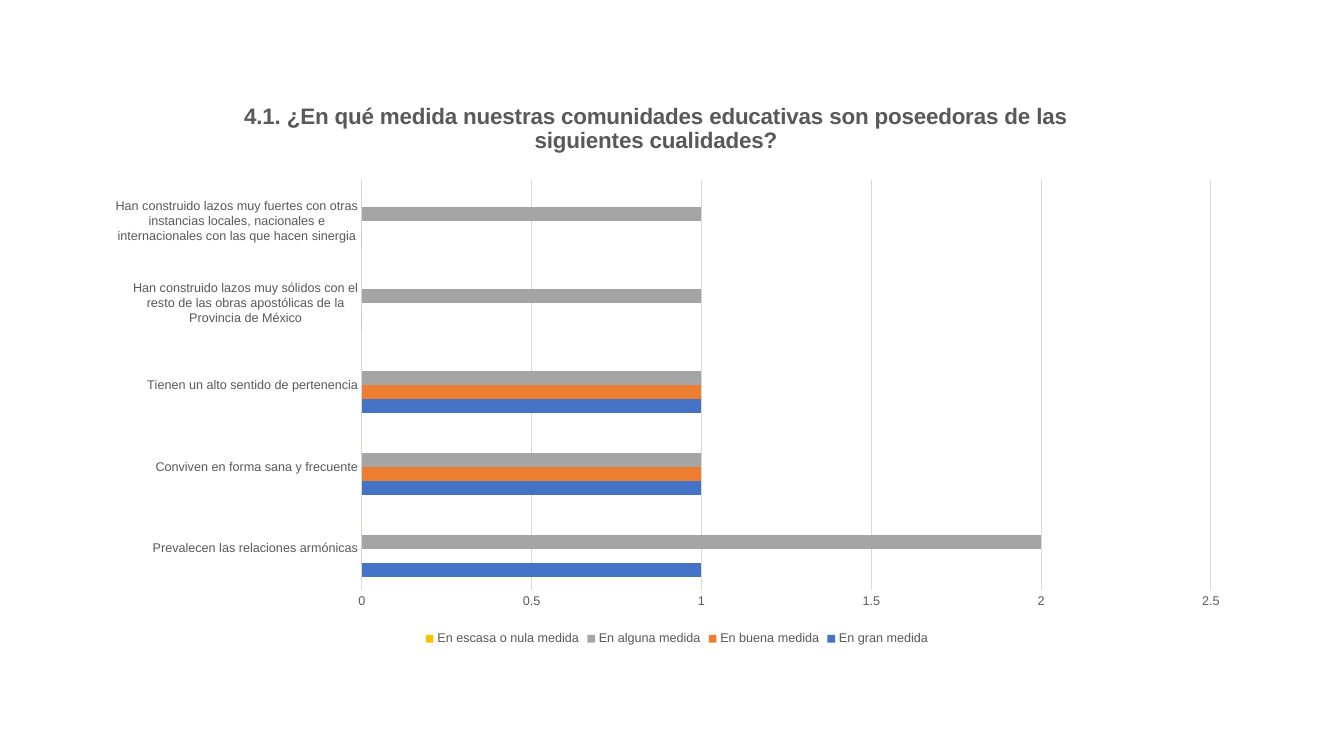
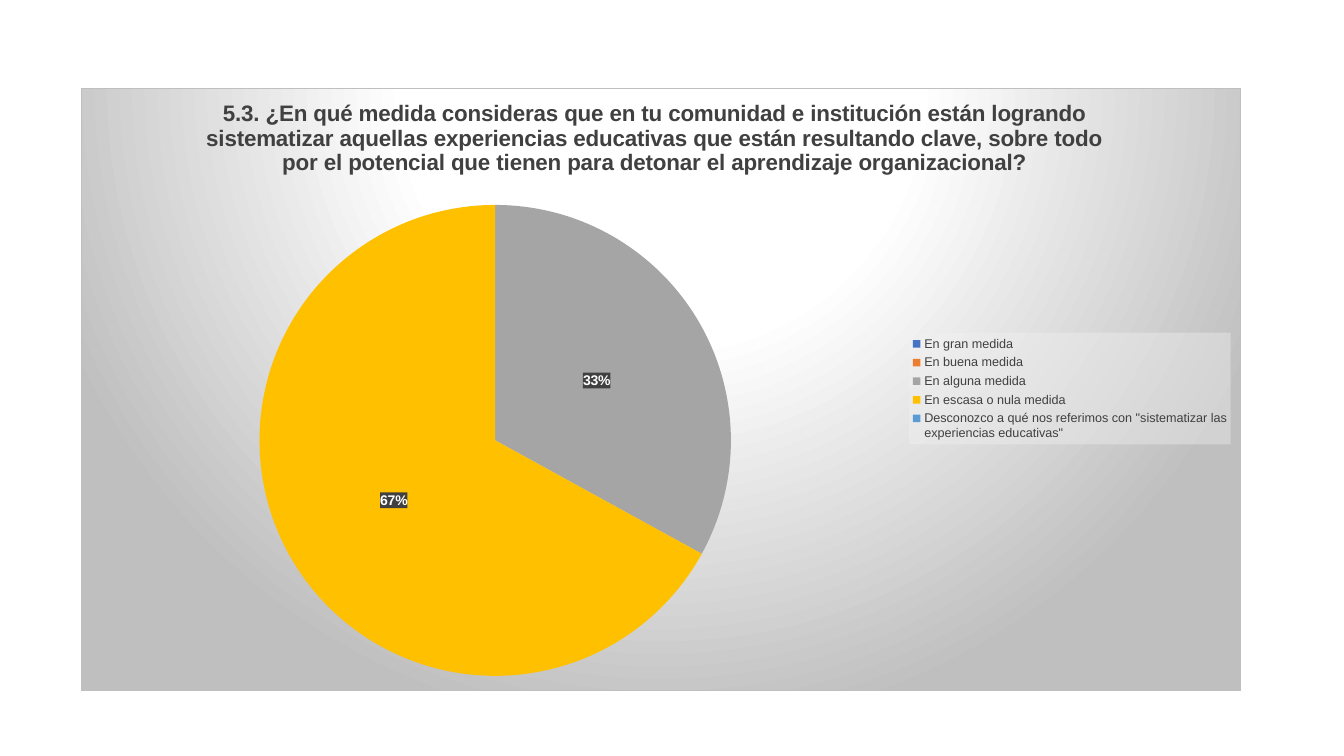
from lxml import etree
from pptx import Presentation
from pptx import util as u
from pptx.chart.data import CategoryChartData
from pptx.dml.color import RGBColor
from pptx.enum import chart as ch
from pptx.oxml.ns import qn

PX = 9144
WIDE, HIGH = 1333, 750
FACE = "Arial"
BLACK = RGBColor(0x00, 0x00, 0x00)
WHITE = RGBColor(0xFF, 0xFF, 0xFF)
DARK = RGBColor(0x40, 0x40, 0x40)
GRAY = RGBColor(0x59, 0x59, 0x59)
SILVER = RGBColor(0xBF, 0xBF, 0xBF)
PALE = RGBColor(0xD9, 0xD9, 0xD9)
MIST = RGBColor(0xF2, 0xF2, 0xF2)
HUES = [RGBColor(0x44, 0x72, 0xC4), RGBColor(0xED, 0x7D, 0x31),
        RGBColor(0xA5, 0xA5, 0xA5), RGBColor(0xFF, 0xC0, 0x00),
        RGBColor(0x5B, 0x9B, 0xD5)]
RANKS = ["En gran medida", "En buena medida", "En alguna medida",
         "En escasa o nula medida"]
SPACES = ('xmlns:c="http://schemas.openxmlformats.org/drawingml/2006/chart" '
          'xmlns:a="http://schemas.openxmlformats.org/drawingml/2006/main"')


def style(font, size=9, color=GRAY, bold=False):
    """Format a font."""
    font.name, font.size, font.bold = FACE, u.Pt(size), bold
    font.color.rgb = color


def write(frame, words, **form):
    """Put formatted text in a frame."""
    frame.text = words
    style(frame.paragraphs[0].runs[0].font, **form)


def place(node, spot, box, area, inner=False):
    """Lay out a chart part at area, in px from the corner of box."""
    for old in node.findall(qn("c:layout")):
        node.remove(old)
    target = '<c:layoutTarget val="inner"/>' if inner else ""
    modes = "".join(f'<c:{k}Mode val="edge"/>' for k in "xy")
    sizes = "".join(f'<c:{k} val="{v / box[2 + i % 2]:.4f}"/>'
                    for i, (k, v) in enumerate(zip("xywh", area)))
    node.insert(spot, etree.fromstring(
        f"<c:layout {SPACES}><c:manualLayout>{target}{modes}{sizes}"
        "</c:manualLayout></c:layout>"))


def paint(node, inside):
    """Give a chart part its shape format, ahead of its text format."""
    node.find(qn("c:txPr")).addprevious(etree.fromstring(
        f"<c:spPr {SPACES}>{inside}</c:spPr>"))


def tint(color, alpha):
    """Return a see-through solid fill."""
    return (f'<a:solidFill><a:srgbClr val="{color}"><a:alpha val="{alpha}000"/>'
            "</a:srgbClr></a:solidFill>")


def glow():
    """Return the round gradient and thin border of the pie panel."""
    stops = "".join(f'<a:gs pos="{at}000"><a:srgbClr val="{hue}"/></a:gs>'
                    for at, hue in [(0, WHITE), (39, WHITE), (100, SILVER)])
    return (f'<a:gradFill><a:gsLst>{stops}</a:gsLst><a:path path="circle">'
            '<a:fillToRect l="50000" t="-80000" r="50000" b="180000"/></a:path>'
            f'</a:gradFill><a:ln w="9525"><a:solidFill><a:srgbClr val="{SILVER}"/>'
            "</a:solidFill></a:ln>")


def fill(part, color):
    """Fill a series or point with one colour."""
    part.format.fill.solid()
    part.format.fill.fore_color.rgb = color


def rule(line):
    """Draw a thin pale line."""
    line.color.rgb, line.width = PALE, u.Pt(0.75)


def graph(deck, kind, box, cats, rows, title, start, plot, color, side):
    """Add a slide with a titled chart and return the chart."""
    data = CategoryChartData()
    data.categories = cats
    for name, vals in rows:
        data.add_series(name, vals)
    slide = deck.slides.add_slide(deck.slide_layouts[6])
    chart = slide.shapes.add_chart(kind, *(v * PX for v in box), data).chart
    style(chart.font, size=10, color=BLACK)
    chart.has_title = True
    write(chart.chart_title.text_frame, title, size=16, color=color, bold=True)
    chart.chart_title.include_in_layout = False
    root = chart.element.find(qn("c:chart"))
    place(root.find(qn("c:title")), 1, box, start)
    place(root.find(qn("c:plotArea")), 0, box, plot, inner=True)
    chart.has_legend = True
    chart.legend.position = side
    chart.legend.include_in_layout = False
    style(chart.legend.font, color=color)
    return chart


def bars(deck, box):
    """Build the slide of grouped bars."""
    cats = ["Prevalecen las relaciones armónicas",
            "Conviven en forma sana y frecuente",
            "Tienen un alto sentido de pertenencia",
            "Han construido lazos muy sólidos con el resto de las obras "
            "apostólicas de la Provincia de México",
            "Han construido lazos muy fuertes con otras instancias locales, "
            "nacionales e internacionales con las que hacen sinergia"]
    vals = [(1, 1, 1, 0, 0), (0, 1, 1, 0, 0), (2, 1, 1, 1, 1), (0, 0, 0, 0, 0)]
    chart = graph(
        deck, ch.XL_CHART_TYPE.BAR_CLUSTERED, box, cats, zip(RANKS, vals),
        "4.1. ¿En qué medida nuestras comunidades educativas son poseedoras "
        "de las siguientes cualidades?",
        (128, 7), (249, 89, 842, 406), GRAY, ch.XL_LEGEND_POSITION.BOTTOM)
    group = chart.plots[0]
    group.gap_width, group.vary_by_categories = 182, False
    for row, hue in zip(group.series, HUES):
        fill(row, hue)
        row.invert_if_negative = False
    for axis in (chart.category_axis, chart.value_axis):
        axis.major_tick_mark = axis.minor_tick_mark = ch.XL_TICK_MARK.NONE
        style(axis.tick_labels.font)
    rule(chart.category_axis.format.line)
    scale = chart.value_axis
    scale.minimum_scale, scale.maximum_scale, scale.major_unit = 0, 2.5, 0.5
    scale.format.line.fill.background()
    rule(scale.major_gridlines.format.line)


def pie(deck, box):
    """Build the slide of the pie on a shaded panel."""
    cats = RANKS + ['Desconozco a qué nos referimos con "sistematizar las '
                    'experiencias educativas"']
    chart = graph(
        deck, ch.XL_CHART_TYPE.PIE, box, cats, [("Series 1", (0, 0, 33, 67, 0))],
        "5.3. ¿En qué medida consideras que en tu comunidad e institución están "
        "logrando sistematizar aquellas experiencias educativas que están "
        "resultando clave, sobre todo por el potencial que tienen para detonar "
        "el aprendizaje organizacional?",
        (120, 7), (177, 116, 468, 468), DARK, ch.XL_LEGEND_POSITION.RIGHT)
    paint(chart.element, glow())
    key = chart.legend.element if hasattr(chart.legend, "element") else \
        chart.element.find(qn("c:chart")).find(qn("c:legend"))
    place(key, 1, box, (822, 243, 319, 111))
    paint(key, tint(MIST, 39))
    group = chart.plots[0]
    group.vary_by_categories = True
    row = group.series[0]
    for i, hue in enumerate(HUES):
        fill(row.points[i], hue)
    tags = row.data_labels
    tags.show_percentage, tags.show_value = True, False
    tags.number_format, tags.number_format_is_linked = "0%", False
    tags.position = ch.XL_LABEL_POSITION.CENTER
    style(tags.font, size=10, color=WHITE, bold=True)
    paint(next(chart.element.iter(qn("c:dLbls"))), tint(DARK, 90))


def main():
    """Build and save the deck."""
    deck = Presentation()
    deck.slide_width, deck.slide_height = WIDE * PX, HIGH * PX
    bars(deck, (110, 90, 1123, 555))
    pie(deck, (80, 87, 1151, 599))
    deck.save("out.pptx")


if __name__ == "__main__":
    main()
